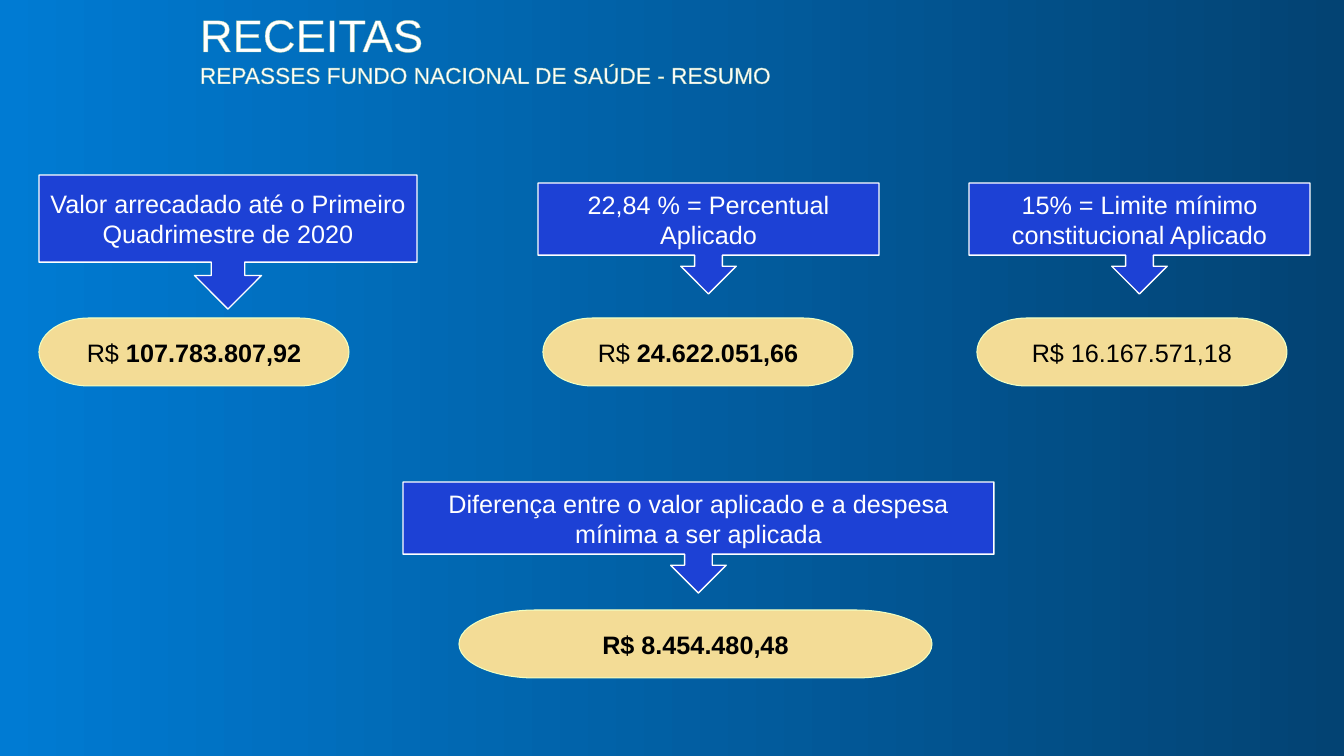
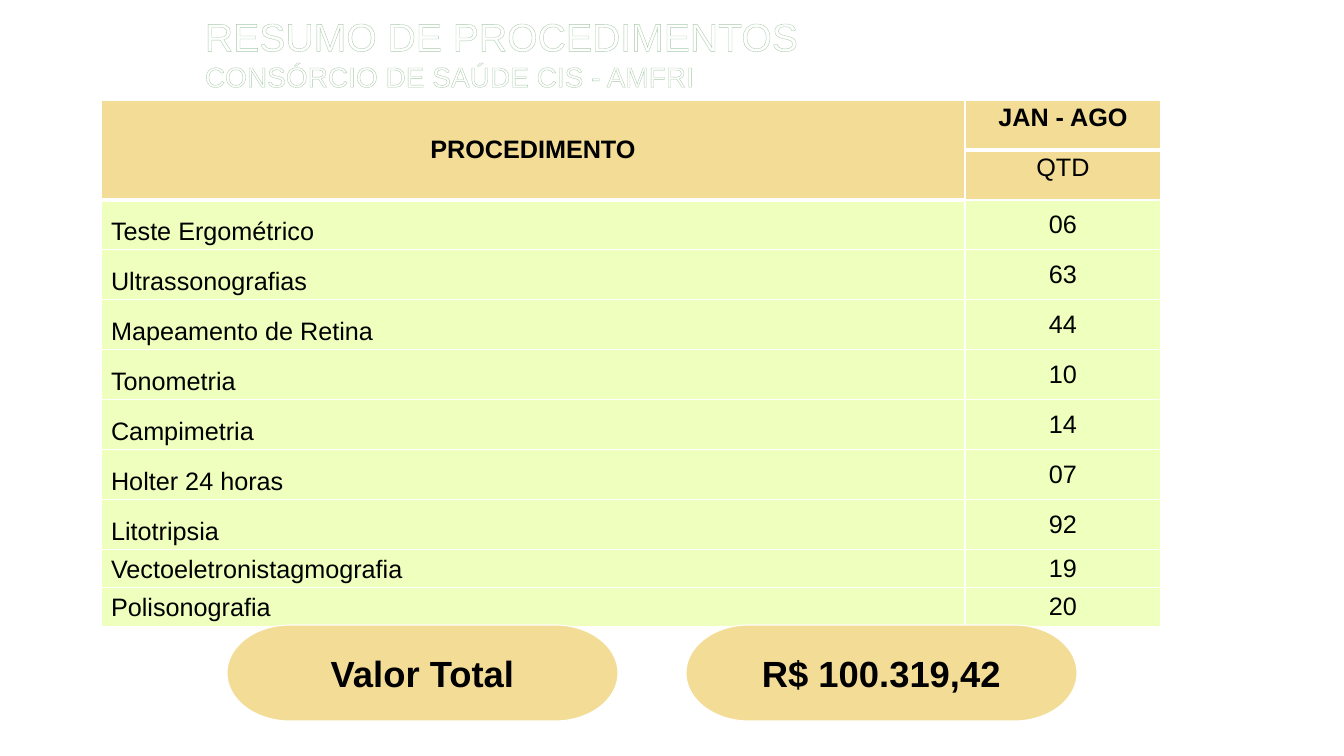
"""Builds two slides: health revenue summary and procedures table."""
from pptx import Presentation
from pptx.dml.color import RGBColor
from pptx.enum.shapes import MSO_SHAPE
from pptx.enum.text import MSO_ANCHOR, PP_ALIGN
from pptx.oxml import parse_xml
from pptx.oxml.ns import nsdecls
from pptx.util import Emu, Pt

CALLOUT, PILL = MSO_SHAPE.DOWN_ARROW_CALLOUT, MSO_SHAPE.FLOWCHART_TERMINATOR
TOP, MIDDLE, BOTTOM = MSO_ANCHOR.TOP, MSO_ANCHOR.MIDDLE, MSO_ANCHOR.BOTTOM
LEFT, CENTER = PP_ALIGN.LEFT, PP_ALIGN.CENTER

FONT = "Arial"
WHITE, BLACK = "FFFFFF", "000000"
SAND, BLUE, LIME = "F3DC96", "1D41D5", "EEFFBE"
PILL_LINE, TITLE_LINE = "F0FFC2", "AACAAA"
GRADIENT = ("007BD3", "034373")

REVENUE_TITLE = [("RECEITAS", 32.4), ("REPASSES FUNDO NACIONAL DE SAÚDE - RESUMO", 16.2)]
REVENUES = [
    ("Valor arrecadado até o Primeiro Quadrimestre de 2020", (39, 175, 378, 134),
     [("R$ ", False), ("107.783.807,92", True)], (39, 318, 310, 68)),
    ("22,84 % = Percentual Aplicado", (538, 183, 341, 111),
     [("R$ ", False), ("24.622.051,66", True)], (543, 318, 310, 68)),
    ("15% = Limite mínimo constitucional Aplicado", (969, 183, 341, 111),
     [("R$ 16.167.571,18", False)], (977, 318, 310, 68)),
    ("Diferença entre o valor aplicado e a despesa mínima a ser aplicada", (403, 482, 591, 111),
     [("R$ 8.454.480,48", True)], (459, 610, 473, 68)),
]

PROCEDURE_TITLE = [("RESUMO DE PROCEDIMENTOS", 28), ("CONSÓRCIO DE SAÚDE CIS - AMFRI", 20)]
HEADER = [("PROCEDIMENTO", "JAN - AGO"), ("", "QTD")]
PROCEDURES = [
    ("Teste Ergométrico", "06"), ("Ultrassonografias", "63"),
    ("Mapeamento de Retina", "44"), ("Tonometria", "10"),
    ("Campimetria", "14"), ("Holter 24 horas", "07"), ("Litotripsia", "92"),
    ("Vectoeletronistagmografia", "19"), ("Polisonografia", "20"),
]
COLUMNS = (864, 196)
ROW_H, SHORT_ROW_H, SHORT_ROWS = 50, 38, 2
TOTALS = ["Valor Total", "R$ 100.319,42"]


def px(n):
    return Emu(round(n * 914400 / 100.8))


def rgb(color):
    return RGBColor.from_string(color)


def set_font(p, size, color, bold=None):
    f = p.font
    f.name, f.size, f.bold = FONT, Pt(size), bold
    f.color.rgb = rgb(color)


def add_title(s, lines, box):
    tf = s.shapes.add_textbox(*map(px, box)).text_frame
    tf.word_wrap, tf.vertical_anchor = True, MIDDLE
    for i, (text, size) in enumerate(lines):
        p = tf.add_paragraph() if i else tf.paragraphs[0]
        r = p.add_run()
        r.text = text
        set_font(p, size, WHITE)
        set_font(r, size, WHITE)
        r.font._element.insert(0, parse_xml(
            f'<a:ln {nsdecls("a")} w="{Pt(0.8)}"><a:solidFill>'
            f'<a:srgbClr val="{TITLE_LINE}"/></a:solidFill></a:ln>'))


def add_box(s, kind, box, runs, size, fill, line, line_w, color):
    sp = s.shapes.add_shape(kind, *map(px, box))
    sp.shadow.inherit = False
    sp.fill.solid()
    sp.fill.fore_color.rgb = rgb(fill)
    sp.line.color.rgb = rgb(line)
    sp.line.width = Pt(line_w)
    tf = sp.text_frame
    tf.word_wrap, tf.vertical_anchor = kind == CALLOUT, MIDDLE
    p = tf.paragraphs[0]
    p.alignment = CENTER
    set_font(p, size, color)
    for text, bold in runs:
        r = p.add_run()
        r.text = text
        set_font(r, size, color, bold)


def add_pill(s, box, runs, size, line):
    add_box(s, PILL, box, runs, size, SAND, line, 0.75, BLACK)


def width_below(row, col):
    return 3 if (row, col) in ((0, 0), (1, 0), (0, 1)) else 1


def style_cell(cell, text, row, col):
    header = row < len(HEADER)
    cell.margin_top = cell.margin_bottom = px(4)
    tc_pr = cell._tc.get_or_add_tcPr()
    widths = {"L": 1, "R": 1, "T": width_below(row - 1, col), "B": width_below(row, col)}
    for side, width in widths.items():
        tc_pr.append(parse_xml(
            f'<a:ln{side} {nsdecls("a")} w="{Pt(width)}"><a:solidFill>'
            f'<a:srgbClr val="{WHITE}"/></a:solidFill></a:ln{side}>'))
    cell.fill.solid()
    cell.fill.fore_color.rgb = rgb(SAND if header else LIME)
    if header:
        cell.vertical_anchor = TOP if col else MIDDLE
    else:
        cell.vertical_anchor = MIDDLE if col else BOTTOM
    p = cell.text_frame.paragraphs[0]
    if text:
        p.add_run().text = text
    p.alignment = CENTER if header or col else LEFT
    set_font(p, 18, BLACK, row == 0)


def add_procedures(s):
    rows = HEADER + PROCEDURES
    tall = len(rows) - SHORT_ROWS
    heights = [ROW_H] * tall + [SHORT_ROW_H] * SHORT_ROWS
    table = s.shapes.add_table(len(rows), len(COLUMNS), px(101), px(100),
                               px(sum(COLUMNS)), px(sum(heights))).table
    table.first_row = table.horz_banding = False
    for column, width in zip(table.columns, COLUMNS):
        column.width = px(width)
    for i, (values, height) in enumerate(zip(rows, heights)):
        table.rows[i].height = px(height)
        for j, text in enumerate(values):
            style_cell(table.cell(i, j), text, i, j)
    table.cell(0, 0).merge(table.cell(1, 0))


def revenue_slide(prs):
    s = prs.slides.add_slide(prs.slide_layouts[6])
    fill = s.background.fill
    fill.gradient()
    fill.gradient_angle = 0
    for stop, color in zip(fill.gradient_stops, GRADIENT):
        stop.color.rgb = rgb(color)
    add_title(s, REVENUE_TITLE, (190, 0, 1058, 95))
    for label, label_box, amount, amount_box in REVENUES:
        add_box(s, CALLOUT, label_box, [(label, None)], 18, BLUE, WHITE, 1, WHITE)
        add_pill(s, amount_box, amount, 18, PILL_LINE)


def procedure_slide(prs):
    s = prs.slides.add_slide(prs.slide_layouts[6])
    s.background.fill.solid()
    s.background.fill.fore_color.rgb = rgb(WHITE)
    add_procedures(s)
    add_title(s, PROCEDURE_TITLE, (195, 20, 985, 65))
    for i, text in enumerate(TOTALS):
        add_pill(s, (227 + i * 459, 625, 391, 96), [(text, True)], 26, WHITE)


def main():
    prs = Presentation()
    prs.slide_width, prs.slide_height = px(1344), px(756)
    revenue_slide(prs)
    procedure_slide(prs)
    prs.save("out.pptx")


if __name__ == "__main__":
    main()
